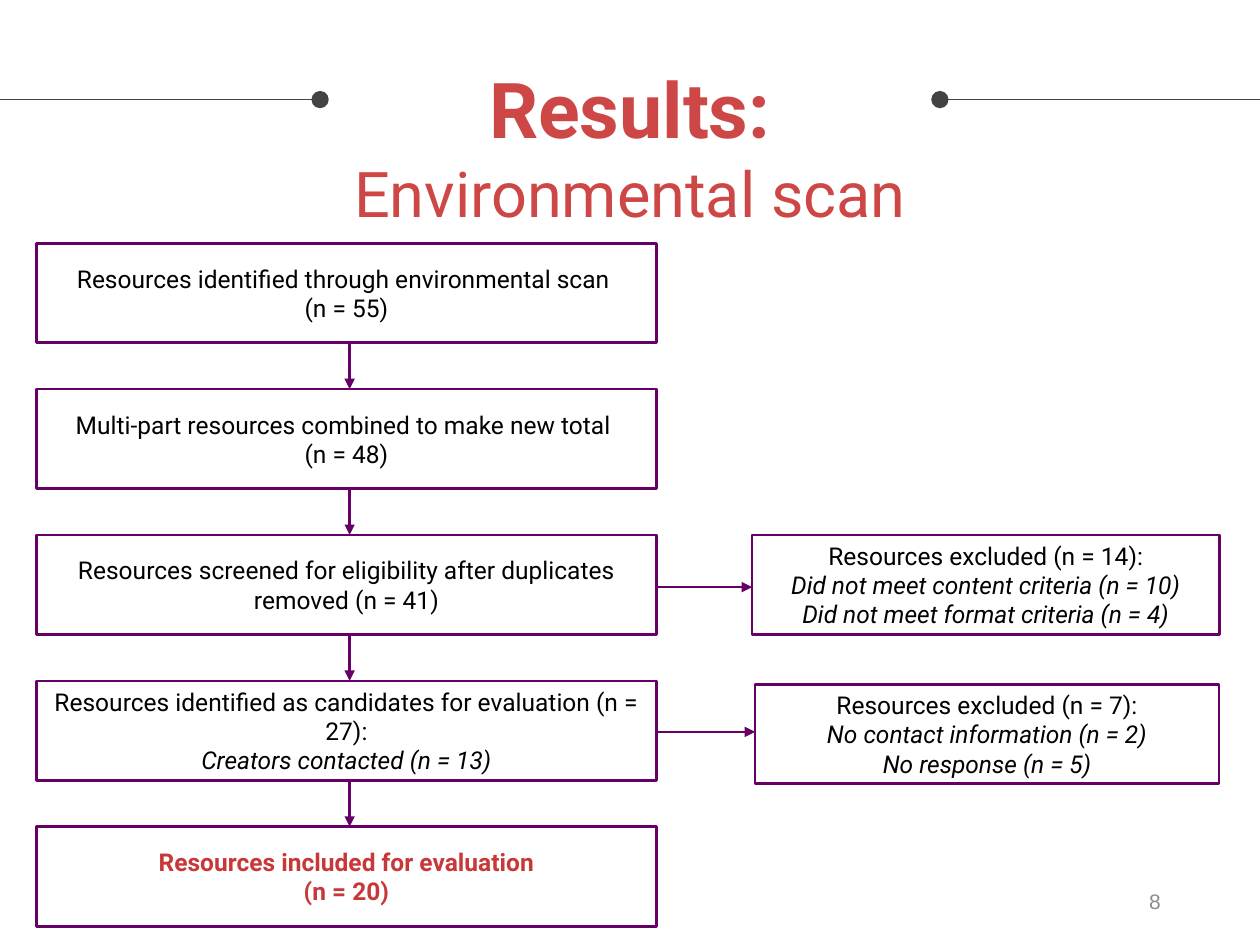
import pptx
import pptx.dml.color
import pptx.enum.shapes
import pptx.enum.text
import pptx.oxml.ns
import pptx.util
from lxml import etree

Pt = pptx.util.Pt
ALIGN = pptx.enum.text.PP_ALIGN
PURPLE, GREY, BLACK, RED = "660066", "434343", "000000", "C83838"

# Flow chart grid, in points
MAIN_LEFT, MAIN_WIDTH = 20.9, 354.2
TOP, STEP, HEIGHT = 139, 83.35, 56.9
MAIN_RIGHT = MAIN_LEFT + MAIN_WIDTH

# Each box is a list of paragraphs, each paragraph a list of (line, italic)
MAIN_STEPS = [
    [[("Resources identified through environmental scan ", False), ("(n = 55)", False)]],
    [[("Multi-part resources combined to make new total ", False), ("(n = 48)", False)]],
    [[("Resources screened for eligibility after duplicates removed (n = 41)", False)]],
    [[("Resources identified as candidates for evaluation (n = 27):", False)],
     [("Creators contacted (n = 13)", True)]],
    [[("Resources included for evaluation", False), ("(n = 20)", False)]],
]
# Left, top, width, arrow height, paragraphs
EXCLUSIONS = [
    (429.8, 305.7, 267.1, 335.5,
     [[("Resources excluded (n = 14):", False),
       ("Did not meet content criteria (n = 10)", True),
       ("Did not meet format criteria (n = 4)", True)]]),
    (431.5, 391, 265.2, 418.2,
     [[("Resources excluded (n = 7):", False),
       ("No contact information (n = 2)", True),
       ("No response (n = 5)", True)]]),
]


def color(value):
    return pptx.dml.color.RGBColor.from_string(value)


def style_font(font, name, size, value, bold=False):
    font.name, font.size, font.bold = name, Pt(size), bold
    font.color.rgb = color(value)


def prepare_frame(shape):
    frame = shape.text_frame
    frame.word_wrap = True
    frame.vertical_anchor = pptx.enum.text.MSO_ANCHOR.MIDDLE
    return frame


def add_line(page, start, end, value, width, marker, kind, size):
    """Straight line with a marker at its start (headEnd) or end (tailEnd)."""
    line = page.shapes.add_connector(
        pptx.enum.shapes.MSO_CONNECTOR.STRAIGHT, *map(Pt, start + end))
    line.line.color.rgb = color(value)
    line.line.width = Pt(width)
    name = pptx.oxml.ns.qn
    etree.SubElement(line.line._get_or_add_ln(), name(f"a:{marker}"),
                     type=kind, w=size, len=size)
    etree.SubElement(line._element.spPr, name("a:effectLst"))


def add_arrow(page, start, end):
    add_line(page, start, end, PURPLE, 1.5, "tailEnd", "triangle", "med")


def add_box(page, left, top, width, paragraphs, value=BLACK, bold=False):
    box = page.shapes.add_shape(pptx.enum.shapes.MSO_SHAPE.RECTANGLE,
                                *map(Pt, (left, top, width, HEIGHT)))
    box.shadow.inherit = False
    box.fill.solid()
    box.fill.fore_color.rgb = color("FFFFFF")
    box.line.color.rgb = color(PURPLE)
    box.line.width = Pt(1.5)
    frame = prepare_frame(box)
    for index, lines in enumerate(paragraphs):
        para = frame.add_paragraph() if index else frame.paragraphs[0]
        para.alignment = ALIGN.CENTER
        style_font(para.font, "Roboto", 14, value, bold)
        for number, (text, italic) in enumerate(lines):
            if number:
                para.add_line_break()
            span = para.add_run()
            span.text = text
            style_font(span.font, "Roboto", 14, value, bold)
            span.font.italic = italic


def add_title(page):
    box = page.shapes.add_textbox(*map(Pt, (143.3, 38.2, 433.4, 90)))
    frame = prepare_frame(box)
    frame.margin_left = frame.margin_right = Pt(7.2)
    frame.margin_top = frame.margin_bottom = Pt(7.2)
    para = frame.paragraphs[0]
    para.alignment = ALIGN.CENTER
    heading = para.add_run()
    heading.text = "Results:"
    style_font(heading.font, "Roboto", 44, "CD4747", True)
    para.add_line_break()
    subject = para.add_run()
    subject.text = "Environmental scan"
    style_font(subject.font, "Roboto", 36, "CD4747")


def add_page_number(page):
    box = page.shapes.add_textbox(*map(Pt, (508.3, 500.4, 162, 28.8)))
    para = prepare_frame(box).paragraphs[0]
    para.text = "8"
    para.alignment = ALIGN.RIGHT
    style_font(para.font, "Arial", 12, "8C8C8C")


def main():
    deck = pptx.Presentation()
    deck.slide_width, deck.slide_height = Pt(720), Pt(540)
    page = deck.slides.add_slide(deck.slide_layouts[6])

    # Title between two lines with round ends
    for inner, edge in ((182.9, 0), (537.1, 720)):
        add_line(page, (inner, 56.9), (edge, 56.9), GREY, 0.75, "headEnd", "oval", "lg")
    add_title(page)
    add_page_number(page)

    # Main column; the last step is highlighted
    last = len(MAIN_STEPS) - 1
    for index, paragraphs in enumerate(MAIN_STEPS):
        final = index == last
        add_box(page, MAIN_LEFT, TOP + index * STEP, MAIN_WIDTH, paragraphs,
                RED if final else BLACK, final)

    # Exclusions beside it
    for left, top, width, middle, paragraphs in EXCLUSIONS:
        add_box(page, left, top, width, paragraphs)
        add_arrow(page, (MAIN_RIGHT, middle), (left, middle))

    # Arrows down the main column
    for index in range(last):
        bottom = TOP + index * STEP + HEIGHT
        add_arrow(page, (199.8, bottom), (199.8, TOP + (index + 1) * STEP))

    deck.save("out.pptx")


if __name__ == "__main__":
    main()
